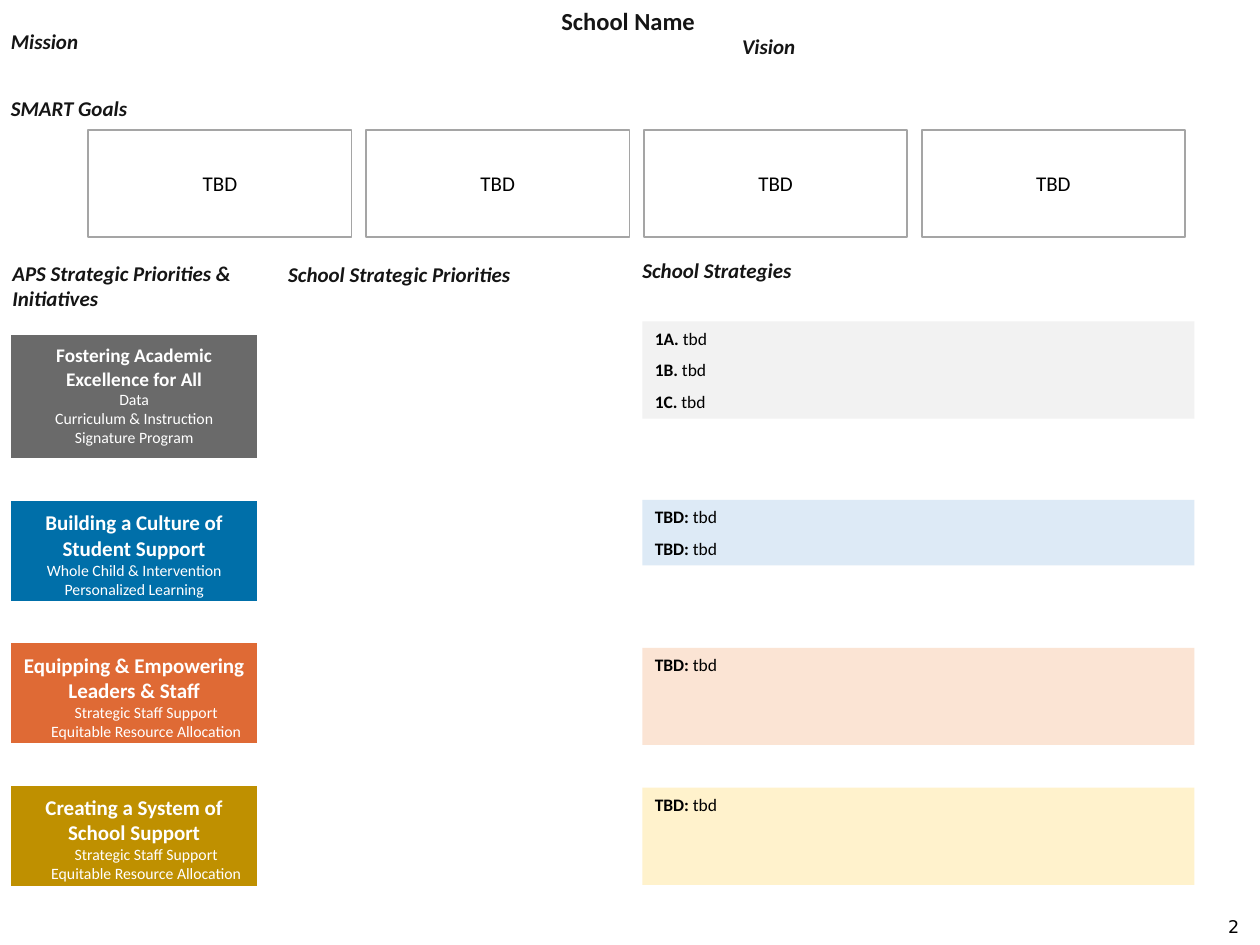
import pptx
import pptx.util
import pptx.dml.color
import pptx.enum.shapes
import pptx.enum.text
from dataclasses import dataclass

Cm = pptx.util.Cm
Pt = pptx.util.Pt
Align = pptx.enum.text.PP_ALIGN
Anchor = pptx.enum.text.MSO_ANCHOR


@dataclass(frozen=True)
class Theme:
    font: str = "Calibri"
    page_font: str = "DejaVu Sans"
    ink: str = "151515"
    black: str = "000000"
    white: str = "FFFFFF"
    edge: str = "A5A5A5"
    darks: tuple = ("6A6A6A", "006FA9", "DF6A35", "BF9000")
    lights: tuple = ("F2F2F2", "DDEAF6", "FBE4D4", "FFF2CC")
    title: int = 14
    head: int = 12
    body: int = 10
    small: int = 9


class Board:
    def __init__(self, slide, theme):
        self.slide = slide
        self.theme = theme

    def style(self, part, size, color, bold=False, slant=False, font=None):
        for run in part.runs:
            run.font.name = font or self.theme.font
            run.font.size = Pt(size)
            run.font.bold = bold
            run.font.italic = slant
            run.font.color.rgb = pptx.dml.color.RGBColor.from_string(color)

    def frame(self, shape, pad, anchor=Anchor.TOP):
        text = shape.text_frame
        text.word_wrap = True
        text.vertical_anchor = anchor
        text.margin_left = text.margin_right = Cm(0.25)
        text.margin_top = text.margin_bottom = Cm(pad)
        return text

    def box(self, left, top, width, height, fill, line=None, weight=1):
        shape = self.slide.shapes.add_shape(
            pptx.enum.shapes.MSO_SHAPE.RECTANGLE,
            Cm(left), Cm(top), Cm(width), Cm(height))
        shape.shadow.inherit = False
        shape.fill.solid()
        shape.fill.fore_color.rgb = pptx.dml.color.RGBColor.from_string(fill)
        if line:
            shape.line.color.rgb = pptx.dml.color.RGBColor.from_string(line)
            shape.line.width = Pt(weight)
        else:
            shape.line.fill.background()
        return shape

    def label(self, words, left, top, height=1.02, size=None, slant=True, align=Align.LEFT):
        shape = self.slide.shapes.add_textbox(Cm(left), Cm(top), Cm(5.11), Cm(height))
        text = self.frame(shape, 0.25)
        text.text = words
        text.paragraphs[0].alignment = align
        self.style(text.paragraphs[0], size or self.theme.head, self.theme.ink, True, slant)

    def goal(self, words, left):
        shape = self.box(left, 2.62, 5.31, 2.16, self.theme.white, self.theme.edge)
        text = self.frame(shape, 0.13, Anchor.MIDDLE)
        text.text = words
        text.paragraphs[0].alignment = Align.CENTER
        self.style(text.paragraphs[0], self.theme.head, self.theme.black)

    def card(self, head, items, top, height, fill, size, indent):
        shape = self.box(0.15, top, 5.11, height, fill, self.theme.white, 4)
        text = self.frame(shape, 0.25)
        text.text = "\n".join([head, *items])
        for rank, part in enumerate(text.paragraphs):
            part.alignment = Align.CENTER
            first = rank == 0
            self.style(part, size if first else self.theme.small, self.theme.white, first)
            if indent and not first:
                part._p.get_or_add_pPr().set("marL", str(Cm(indent)))

    def plan(self, tags, top, height, fill):
        shape = self.box(12.95, top, 11.13, height, fill)
        text = self.frame(shape, 0.13)
        text.text = "\n".join(tags)
        for rank, part in enumerate(text.paragraphs):
            part.alignment = Align.LEFT
            part.space_before = Pt(6 if rank else 0)
            part.add_run().text = " tbd"
            self.style(part, self.theme.body, self.theme.black)
            part.runs[0].font.bold = True

    def page(self, number):
        shape = self.slide.shapes.add_textbox(Cm(19.51), Cm(18.16), Cm(5.72), Cm(1.02))
        text = self.frame(shape, 0.13, Anchor.MIDDLE)
        text.text = number
        text.paragraphs[0].alignment = Align.RIGHT
        self.style(text.paragraphs[0], self.theme.body, self.theme.black,
                   font=self.theme.page_font)


def main():
    deck = pptx.Presentation()
    deck.slide_width, deck.slide_height = Cm(25.4), Cm(19.05)
    theme = Theme()
    board = Board(deck.slides.add_slide(deck.slide_layouts[6]), theme)

    board.label("School Name", 10.11, -0.13, 1.12, theme.title, False, Align.CENTER)
    board.label("Mission", -0.03, 0.33)
    board.label("Vision", 14.71, 0.43)
    board.label("SMART Goals", -0.03, 1.68)
    board.label("APS Strategic Priorities & Initiatives", 0, 5, 1.55)
    board.label("School Strategic Priorities", 5.56, 5.03)
    board.label("School Strategies", 12.7, 4.95)

    for col in range(4):
        board.goal("TBD", 1.78 + 5.6 * col)

    staff = ["Strategic Staff Support", "Equitable Resource Allocation"]
    cards = [
        ("Fostering Academic Excellence for All",
         ["Data", "Curriculum & Instruction", "Signature Program"], 6.68, 2.62, 11, 0),
        ("Building a Culture of Student Support",
         ["Whole Child & Intervention", "Personalized Learning"], 10.03, 2.16, 12, 0),
        ("Equipping & Empowering Leaders & Staff", staff, 12.9, 2.16, 12, 0.48),
        ("Creating a System of School Support", staff, 15.77, 2.16, 12, 0.48),
    ]
    for (head, items, top, height, size, indent), fill in zip(cards, theme.darks):
        board.card(head, items, top, height, fill, size, indent)

    plans = [
        (["1A.", "1B.", "1C."], 6.48, 1.96),
        (["TBD:", "TBD:"], 10.08, 1.32),
        (["TBD:"], 13.06, 1.96),
        (["TBD:"], 15.88, 1.96),
    ]
    for (tags, top, height), fill in zip(plans, theme.lights):
        board.plan(tags, top, height, fill)

    board.page("2")
    deck.save("out.pptx")


if __name__ == "__main__":
    main()
